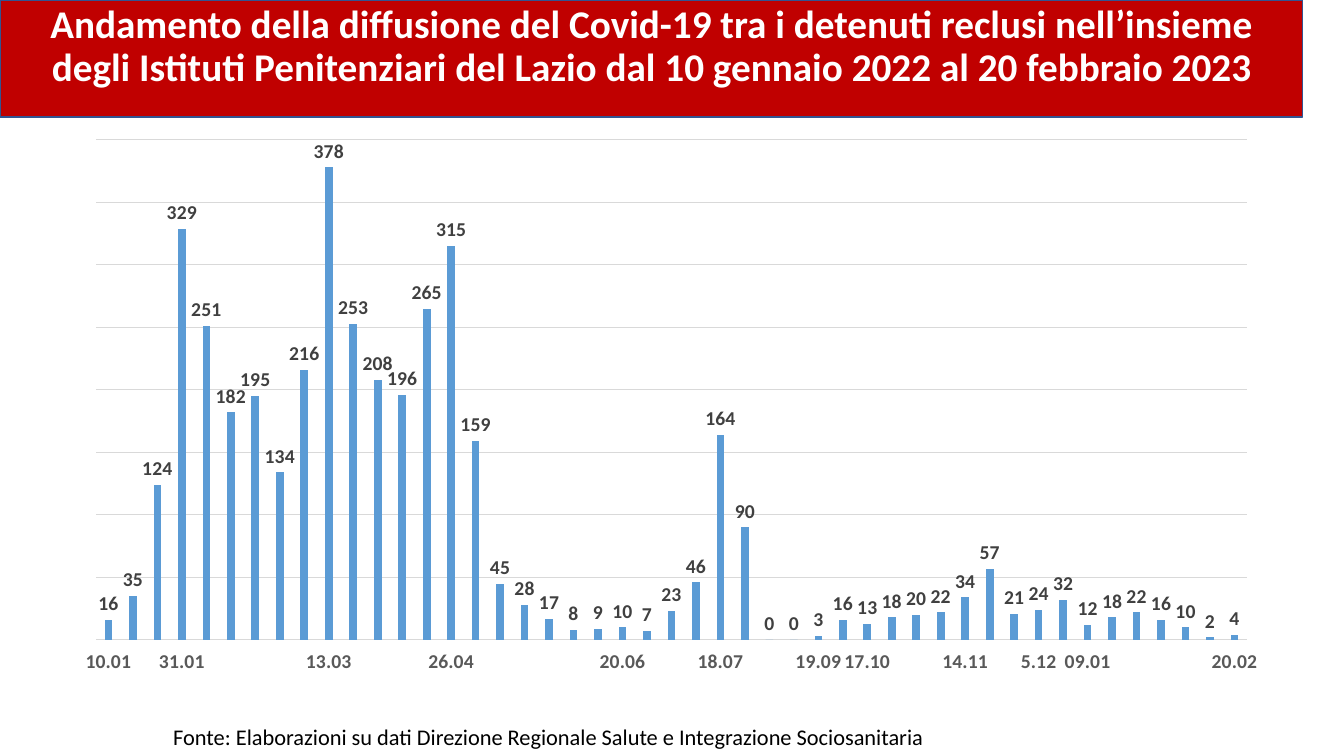
from dataclasses import dataclass

from lxml.etree import SubElement
from pptx import Presentation
from pptx.chart.chart import Chart
from pptx.chart.data import CategoryChartData
from pptx.dml.color import RGBColor
from pptx.enum.chart import XL_CHART_TYPE, XL_LABEL_POSITION, XL_TICK_LABEL_POSITION, XL_TICK_MARK
from pptx.enum.shapes import MSO_SHAPE
from pptx.enum.text import MSO_ANCHOR, MSO_AUTO_SIZE, PP_ALIGN
from pptx.oxml.ns import qn
from pptx.slide import Slide
from pptx.text.text import Font
from pptx.util import Emu, Pt

EMU_PER_PX = 9144  # 100 px to the inch
GRID_COLOR = "D9D9D9"

TITLE = (
    "Andamento della diffusione del Covid-19 tra i detenuti reclusi nell’insieme "
    "degli Istituti Penitenziari del Lazio dal 10 gennaio 2022 al 20 febbraio 2023"
)
SOURCE = "Fonte: Elaborazioni su dati Direzione Regionale Salute e Integrazione Sociosanitaria"

CASES = [
    16, 35, 124, 329, 251, 182, 195, 134, 216, 378, 253, 208, 196, 265, 315, 159,
    45, 28, 17, 8, 9, 10, 7, 23, 46, 164, 90, 0, 0, 3, 16, 13,
    18, 20, 22, 34, 57, 21, 24, 32, 12, 18, 22, 16, 10, 2, 4,
]
DATES = {
    0: "10.01", 3: "31.01", 9: "13.03", 14: "26.04", 21: "20.06", 25: "18.07",
    29: "19.09", 31: "17.10", 35: "14.11", 38: "5.12", 40: "09.01", 46: "20.02",
}


@dataclass(frozen=True)
class Box:
    left: int
    top: int
    width: int
    height: int

    def emu(self) -> tuple[Emu, Emu, Emu, Emu]:
        return px(self.left), px(self.top), px(self.width), px(self.height)


@dataclass(frozen=True)
class TextStyle:
    size: int
    color: str
    bold: bool = False


BANNER = Box(0, 0, 1292, 116)
CAPTION = Box(162, 713, 784, 37)
CHART = Box(59, 128, 1214, 545)
PLOT = {"x": 0.03, "y": 0.02, "w": 0.94, "h": 0.91}  # shares of the chart


def px(length: int) -> Emu:
    return Emu(length * EMU_PER_PX)


def rgb(color: str) -> RGBColor:
    return RGBColor.from_string(color)


def style_font(font: Font, style: TextStyle) -> None:
    font.name = "Calibri"
    font.size = Pt(style.size)
    font.bold = style.bold
    font.color.rgb = rgb(style.color)


def add_banner(slide: Slide) -> None:
    banner = slide.shapes.add_shape(MSO_SHAPE.RECTANGLE, *BANNER.emu())
    banner.shadow.inherit = False
    banner.fill.solid()
    banner.fill.fore_color.rgb = rgb("C00000")
    banner.line.color.rgb = rgb("325491")
    banner.line.width = Pt(1)
    banner.text_frame.word_wrap = True
    banner.text_frame.vertical_anchor = MSO_ANCHOR.TOP
    paragraph = banner.text_frame.paragraphs[0]
    paragraph.alignment = PP_ALIGN.CENTER
    paragraph.line_spacing = 0.9
    paragraph.space_before = Pt(10)
    run = paragraph.add_run()
    run.text = TITLE
    style_font(run.font, TextStyle(28, "FFFFFF", True))


def add_caption(slide: Slide) -> None:
    caption = slide.shapes.add_textbox(*CAPTION.emu())
    caption.text_frame.word_wrap = False
    caption.text_frame.auto_size = MSO_AUTO_SIZE.SHAPE_TO_FIT_TEXT
    run = caption.text_frame.paragraphs[0].add_run()
    run.text = SOURCE
    style_font(run.font, TextStyle(16, "000000"))


def fix_plot_area(chart: Chart) -> None:
    """Pin the inner plot area to the PLOT shares."""
    plot_area = chart._chartSpace.chart.plotArea
    for old_layout in plot_area.findall(qn("c:layout")):
        plot_area.remove(old_layout)
    layout = SubElement(plot_area, qn("c:layout"))
    plot_area.insert(0, layout)
    manual = SubElement(layout, qn("c:manualLayout"))
    settings = {"layoutTarget": "inner", "xMode": "edge", "yMode": "edge", **PLOT}
    for name, value in settings.items():
        SubElement(manual, qn(f"c:{name}")).set("val", str(value))


def style_axes(chart: Chart) -> None:
    dates = chart.category_axis
    dates.major_tick_mark = dates.minor_tick_mark = XL_TICK_MARK.NONE
    dates.tick_label_position = XL_TICK_LABEL_POSITION.LOW
    dates.format.line.color.rgb = rgb(GRID_COLOR)
    dates.format.line.width = Pt(0.75)
    style_font(dates.tick_labels.font, TextStyle(14, "595959", True))
    label_body = dates._element.find(qn("c:txPr")).find(qn("a:bodyPr"))
    label_body.set("rot", "-60000000")
    label_body.set("vert", "horz")

    cases = chart.value_axis
    cases.minimum_scale, cases.maximum_scale, cases.major_unit = 0, 400, 50
    cases.has_major_gridlines = True
    cases.major_gridlines.format.line.color.rgb = rgb(GRID_COLOR)
    cases.major_gridlines.format.line.width = Pt(0.75)
    cases.visible = False


def add_cases_chart(slide: Slide) -> None:
    data = CategoryChartData()
    data.categories = [DATES.get(week, "") for week in range(len(CASES))]
    data.add_series("Series 1", CASES)
    chart = slide.shapes.add_chart(XL_CHART_TYPE.COLUMN_CLUSTERED, *CHART.emu(), data).chart
    chart.has_title = False
    chart.has_legend = False
    style_font(chart.font, TextStyle(14, "000000", True))

    plot = chart.plots[0]
    plot.vary_by_categories = False
    plot.gap_width = 219
    plot.overlap = -27
    series = plot.series[0]
    series.format.fill.solid()
    series.format.fill.fore_color.rgb = rgb("5B9BD5")
    labels = series.data_labels
    labels.show_value = True
    labels.position = XL_LABEL_POSITION.OUTSIDE_END
    style_font(labels.font, TextStyle(14, "404040", True))

    style_axes(chart)
    fix_plot_area(chart)


def main() -> None:
    presentation = Presentation()
    presentation.slide_width, presentation.slide_height = px(1333), px(750)
    slide = presentation.slides.add_slide(presentation.slide_layouts[6])
    add_banner(slide)
    add_caption(slide)
    add_cases_chart(slide)
    presentation.save("out.pptx")


if __name__ == "__main__":
    main()
